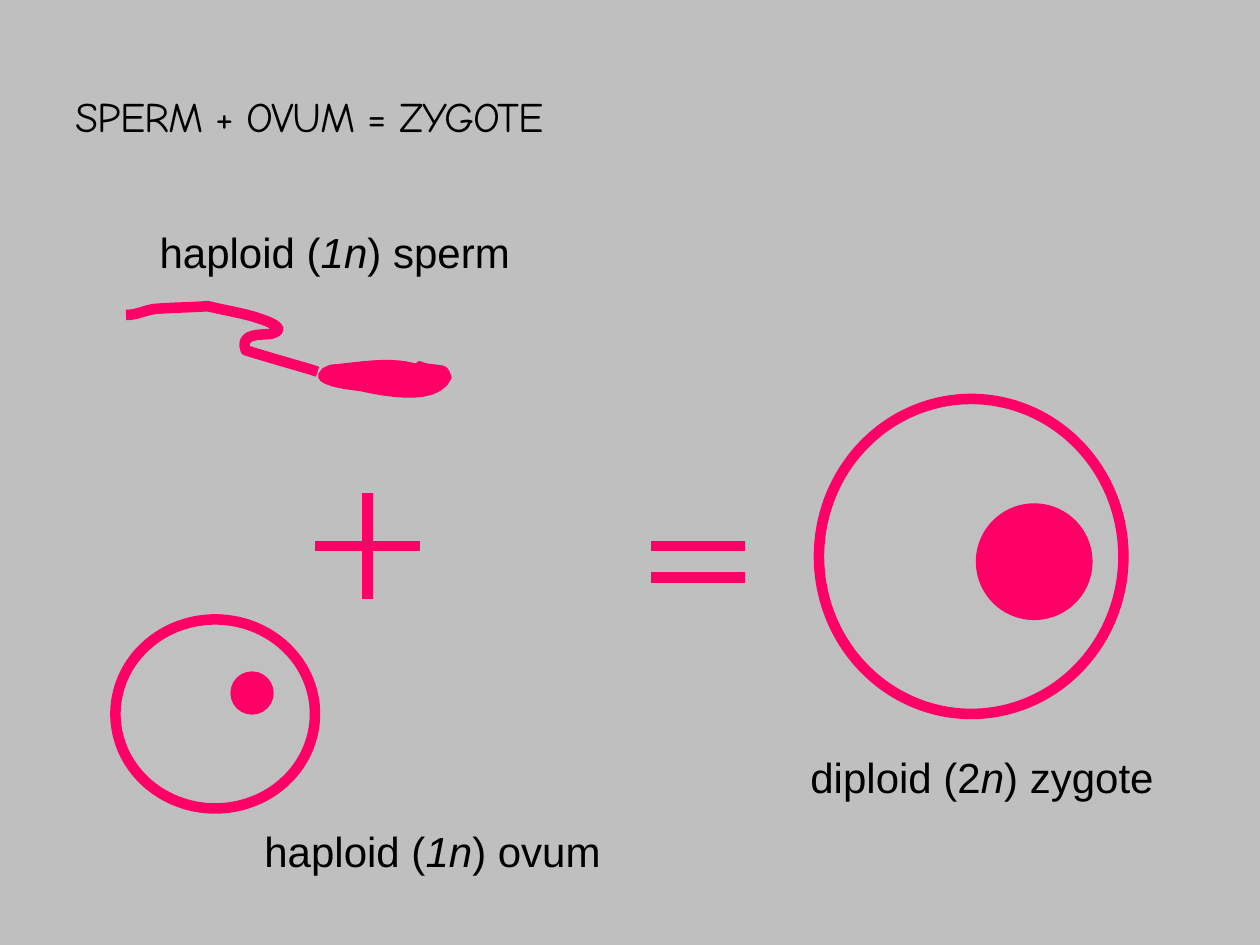
from dataclasses import dataclass

from lxml.etree import SubElement
from pptx import Presentation
from pptx.dml.color import RGBColor
from pptx.enum.shapes import MSO_CONNECTOR, MSO_SHAPE
from pptx.enum.text import MSO_ANCHOR, PP_ALIGN
from pptx.oxml.ns import qn
from pptx.util import Inches, Pt


@dataclass(frozen=True)
class Theme:
    background: RGBColor = RGBColor(0xBF, 0xBF, 0xBF)
    cell: RGBColor = RGBColor(0xC0, 0xC0, 0xC0)
    accent: RGBColor = RGBColor(0xFF, 0x00, 0x66)
    text: RGBColor = RGBColor(0, 0, 0)
    title_font: str = "Comic Neue"
    body_font: str = "Arial"
    size: Pt = Pt(24)
    thick: Pt = Pt(6)
    thin: Pt = Pt(0.75)


def curve_points(start, curves, steps=10):
    """Points along a chain of cubic curves, each (control, control, end)."""
    points = [start]
    for c1, c2, end in curves:
        chain = (points[-1], c1, c2, end)
        for i in range(1, steps + 1):
            t = i / steps
            weights = ((1 - t) ** 3, 3 * t * (1 - t) ** 2, 3 * t * t * (1 - t), t ** 3)
            points.append(tuple(sum(w * pt[axis] for w, pt in zip(weights, chain))
                                for axis in (0, 1)))
    return points


class SlideBuilder:
    """Places elements on a grid of 120 columns by 90 rows."""
    COLS, ROWS = 120, 90

    def __init__(self, prs, theme):
        self.theme = theme
        self.col = prs.slide_width / self.COLS
        self.row = prs.slide_height / self.ROWS
        self.s = prs.slides.add_slide(prs.slide_layouts[1])
        fill = self.s.background.fill
        fill.solid()
        fill.fore_color.rgb = theme.background

    def box(self, x, y, w, h):
        return [round(v) for v in (x * self.col, y * self.row, w * self.col, h * self.row)]

    def place(self, sp, *grid):
        for name, value in zip(("left", "top", "width", "height"), self.box(*grid)):
            setattr(sp, name, value)

    def add_text(self, tf, parts, font):
        """Fill a frame; parts alternate between upright and italic."""
        tf.word_wrap = True
        p = tf.paragraphs[0]
        p.alignment = PP_ALIGN.LEFT
        for i, part in enumerate(parts):
            r = p.add_run()
            r.text = part
            r.font.color.rgb = self.theme.text
            style = {"name": font, "size": self.theme.size, "italic": i % 2 == 1}
            for name, value in style.items():
                setattr(r.font, name, value)
        return p

    def title(self, text, *grid):
        sp = self.s.shapes.title
        self.place(sp, *grid)
        sp.text_frame.vertical_anchor = MSO_ANCHOR.BOTTOM
        p = self.add_text(sp.text_frame, [text], self.theme.title_font)
        p.runs[0]._r.get_or_add_rPr().set("spc", "-60")

    def body(self, parts, *grid):
        sp = self.s.placeholders[1]
        self.place(sp, *grid)
        p = self.add_text(sp.text_frame, parts, self.theme.body_font)
        p.space_before, p.space_after = Pt(4.8), Pt(6)
        pPr = p._p.get_or_add_pPr()
        for name in ("marL", "indent"):
            pPr.set(name, "0")
        SubElement(pPr, qn("a:buNone"))

    def label(self, parts, *grid):
        sp = self.s.shapes.add_textbox(*self.box(*grid))
        p = self.add_text(sp.text_frame, parts, self.theme.body_font)
        p.space_before = Pt(4.8)

    def paint(self, sp, fill, width):
        sp.shadow.inherit = False
        if fill is None:
            sp.fill.background()
        else:
            sp.fill.solid()
            sp.fill.fore_color.rgb = fill
        sp.line.color.rgb = self.theme.accent
        sp.line.width = width

    def ellipse(self, fill, width, *grid):
        sp = self.s.shapes.add_shape(MSO_SHAPE.OVAL, *self.box(*grid))
        self.paint(sp, fill, width)

    def line(self, x1, y1, x2, y2):
        ends = self.box(x1, y1, x2, y2)
        cx = self.s.shapes.add_connector(MSO_CONNECTOR.STRAIGHT, *ends)
        cx.line.color.rgb = self.theme.accent
        cx.line.width = self.theme.thick
        SubElement(cx._element.spPr, qn("a:effectLst"))

    def freeform(self, start, curves, fill, width, close):
        points = [(Inches(x), Inches(y)) for x, y in curve_points(start, curves)]
        builder = self.s.shapes.build_freeform(*points[0])
        builder.add_line_segments(points[1:], close=close)
        self.paint(builder.convert_to_shape(), fill, width)


# Sperm outlines, in inches on the slide
HEAD_START = (3.3, 2.89)
HEAD = [
    ((3.08, 2.83), (2.85, 2.88), (2.62, 2.9)),
    ((2.6, 2.91), (2.57, 2.92), (2.56, 2.93)),
    ((2.42, 3.06), (2.79, 3.09), (2.86, 3.1)),
    ((3.13, 3.16), (3.49, 3.21), (3.58, 3)),
    ((3.55, 2.89), (3.53, 2.91), (3.39, 2.89)),
    ((3.31, 2.87), (3.34, 2.86), HEAD_START),
]
TAIL_START = (2.52, 2.95)
TAIL = [
    ((2.33, 2.89), (2.14, 2.84), (1.95, 2.78)),
    ((1.9, 2.64), (2.07, 2.66), (2.15, 2.65)),
    ((2.26, 2.62), (2.19, 2.58), (2.12, 2.55)),
    ((1.97, 2.49), (1.81, 2.47), (1.65, 2.43)),
    ((1.52, 2.44), (1.39, 2.44), (1.26, 2.45)),
    ((1.17, 2.45), (1.1, 2.5), (1, 2.5)),
]


def main():
    prs = Presentation()
    prs.slide_width, prs.slide_height = Inches(10), Inches(7.5)
    theme = Theme()
    slide = SlideBuilder(prs, theme)

    # Heading and sperm caption
    slide.title("SPERM + OVUM = ZYGOTE", 6, 5, 76, 9)
    slide.body(["haploid (", "1n", ") sperm"], 14, 21, 95.5, 11)

    # Sperm
    slide.freeform(HEAD_START, HEAD, theme.accent, theme.thin, close=True)
    slide.freeform(TAIL_START, TAIL, None, theme.thick, close=False)

    # Plus sign
    slide.line(35, 47, 35, 57)
    slide.line(30, 52, 40, 52)

    # Equals sign
    for y in (52, 55):
        slide.line(62, y, 71, y)

    # Ovum and zygote, each with its nucleus
    for cell, nucleus in (((11, 59, 19, 18), (22, 64, 4, 4)),
                          ((78, 38, 29, 30), (93, 48, 11, 11))):
        slide.ellipse(theme.cell, theme.thick, *cell)
        slide.ellipse(theme.accent, theme.thin, *nucleus)

    # Cell captions
    slide.label(["haploid (", "1n", ") ovum"], 24, 78, 38, 6)
    slide.label(["diploid (2", "n", ") zygote"], 76, 71, 38, 6)

    prs.save("out.pptx")


if __name__ == "__main__":
    main()
